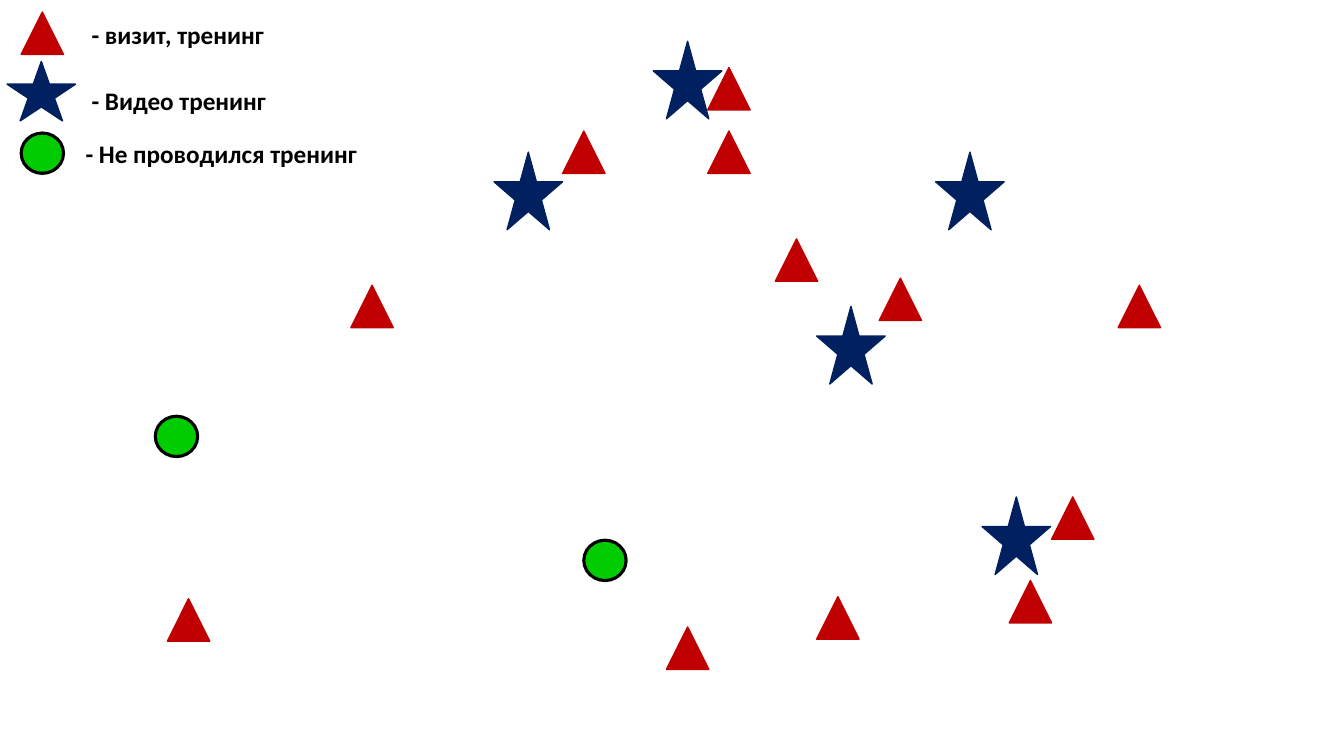
from dataclasses import dataclass

from pptx import Presentation
from pptx.dml.color import RGBColor
from pptx.enum.shapes import MSO_SHAPE
from pptx.enum.text import MSO_AUTO_SIZE
from pptx.util import Inches, Pt

TRIANGLE = MSO_SHAPE.ISOSCELES_TRIANGLE
STAR = MSO_SHAPE.STAR_5_POINT
CIRCLE = MSO_SHAPE.OVAL
FIT_SHAPE = MSO_AUTO_SIZE.SHAPE_TO_FIT_TEXT

COLS, ROWS = 133.3, 75
CELL = Inches(0.1)


@dataclass(frozen=True)
class Theme:
    font: str = "Calibri"
    text_size: float = 18
    text: str = "000000"
    visit: str = "C00000"
    video: str = "002060"
    untrained: str = "00CC00"
    outline: str = "000000"
    thin: float = 1
    thick: float = 2.25


@dataclass(frozen=True)
class Marker:
    """Look of one kind of map marker; width and height are in grid cells."""
    preset: int
    width: float
    height: float
    fill: str
    line: str
    weight: float


class TrainingMap:
    """Draws on one slide, with positions in grid columns and rows."""

    def __init__(self, slide, theme):
        self.s = slide
        self.theme = theme

    def box(self, col, row, width, height):
        return [round(n * CELL) for n in (col, row, width, height)]

    def marker(self, kind, col, row, height=None):
        sp = self.s.shapes.add_shape(
            kind.preset, *self.box(col, row, kind.width, height or kind.height))
        sp.shadow.inherit = False
        sp.fill.solid()
        sp.fill.fore_color.rgb = RGBColor.from_string(kind.fill)
        sp.line.color.rgb = RGBColor.from_string(kind.line)
        sp.line.width = Pt(kind.weight)

    def label(self, text, col, row, width, height=4):
        sp = self.s.shapes.add_textbox(*self.box(col, row, width, height))
        tf = sp.text_frame
        tf.word_wrap = True
        tf.auto_size = FIT_SHAPE
        r = tf.paragraphs[0].add_run()
        r.text = text
        r.font.name = self.theme.font
        r.font.size = Pt(self.theme.text_size)
        r.font.bold = True
        r.font.color.rgb = RGBColor.from_string(self.theme.text)


THEME = Theme()
VISIT = Marker(TRIANGLE, 4.2, 4.2, THEME.visit, THEME.visit, THEME.thin)
VIDEO = Marker(STAR, 6.8, 7.7, THEME.video, THEME.video, THEME.thin)
UNTRAINED = Marker(CIRCLE, 4.2, 4, THEME.untrained, THEME.outline, THEME.thick)

# Column and row of each marker on the map
PLACES = {
    VISIT: [
        (76.9, 23.7), (87.2, 27.6), (104.3, 49.3), (100.1, 57.6),
        (66.1, 62.2), (81, 59.2), (16.6, 59.4), (70.2, 13),
        (55.8, 13), (34.8, 28.3), (70.2, 6.7), (110.9, 28.3),
    ],
    VIDEO: [(81, 30.4), (64.8, 4.1), (49, 15.1), (92.8, 15.1), (97.4, 49.3)],
    UNTRAINED: [(15.4, 41.3), (57.9, 53.6)],
}

# Marker, its column, row and height, then text, its column, row and width
LEGEND = [
    (VISIT, 2.1, 1.2, 4.2, "- визит, тренинг", 8.1, 1.4, 21.1),
    (VIDEO, 0.7, 6.1, 5.9, "- Видео тренинг", 8.1, 8, 21.1),
    (UNTRAINED, 2.1, 13.2, 4, "- Не проводился тренинг", 7.5, 13.2, 33.4),
]


def main():
    prs = Presentation()
    prs.slide_width = round(COLS * CELL)
    prs.slide_height = ROWS * CELL
    training_map = TrainingMap(prs.slides.add_slide(prs.slide_layouts[6]), THEME)

    for kind, places in PLACES.items():
        for col, row in places:
            training_map.marker(kind, col, row)

    for kind, col, row, height, text, text_col, text_row, width in LEGEND:
        training_map.marker(kind, col, row, height)
        training_map.label(text, text_col, text_row, width)

    prs.save("out.pptx")


if __name__ == "__main__":
    main()
